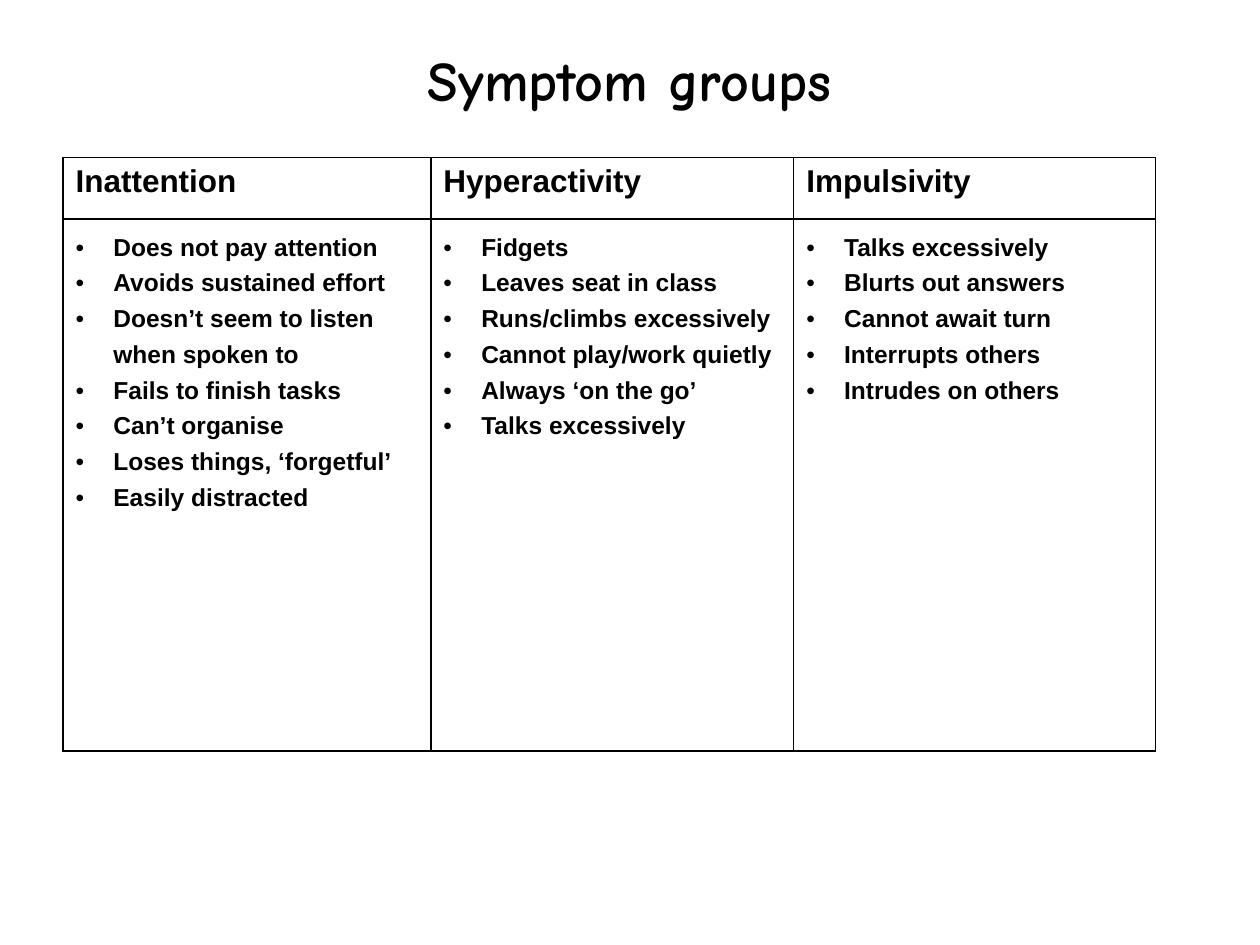
import pptx
import pptx.dml.color
import pptx.enum.text
import pptx.oxml
import pptx.oxml.ns
import pptx.util
from pptx.util import Inches

BLACK = pptx.dml.color.RGBColor(0, 0, 0)
WHITE = pptx.dml.color.RGBColor(255, 255, 255)

TITLE_FONT = {"name": "Comic Neue", "size": pptx.util.Pt(32), "bold": True}
HEADING_FONT = {"name": "Arial", "size": pptx.util.Pt(18), "bold": True}
SYMPTOM_FONT = {"name": "Arial", "size": pptx.util.Pt(14), "bold": True}

COLUMN_WIDTHS = [2.92, 2.88, 2.87]
ROW_HEIGHTS = [0.49, 4.22]

SYMPTOM_GROUPS = {
    "Inattention": [
        "Does not pay attention",
        "Avoids sustained effort",
        "Doesn’t seem to listen when spoken to",
        "Fails to finish tasks",
        "Can’t organise",
        "Loses things, ‘forgetful’",
        "Easily distracted",
    ],
    "Hyperactivity": [
        "Fidgets",
        "Leaves seat in class",
        "Runs/climbs excessively",
        "Cannot play/work quietly",
        "Always ‘on the go’",
        "Talks excessively",
    ],
    "Impulsivity": [
        "Talks excessively",
        "Blurts out answers",
        "Cannot await turn",
        "Interrupts others",
        "Intrudes on others",
    ],
}


def write_paragraph(paragraph, text, font_format):
    run = paragraph.add_run()
    run.text = text
    for attribute, value in font_format.items():
        setattr(run.font, attribute, value)
    run.font.color.rgb = BLACK


def add_bullet(paragraph):
    properties = paragraph._p.get_or_add_pPr()
    properties.set("marL", str(Inches(0.3)))
    properties.set("indent", str(Inches(-0.3)))
    namespace = pptx.oxml.ns.nsdecls("a")
    for xml in (
        f'<a:buFont {namespace} typeface="Arial"/>',
        f'<a:buChar {namespace} char="•"/>',
    ):
        properties.append(pptx.oxml.parse_xml(xml))
    paragraph.line_spacing = 1.3


def format_cell(cell):
    cell.fill.solid()
    cell.fill.fore_color.rgb = WHITE
    properties = cell._tc.get_or_add_tcPr()
    for position, side in enumerate("LRTB"):
        border = pptx.oxml.parse_xml(
            f'<a:ln{side} {pptx.oxml.ns.nsdecls("a")} w="{pptx.util.Pt(1)}">'
            f'<a:solidFill><a:srgbClr val="{BLACK}"/></a:solidFill></a:ln{side}>'
        )
        properties.insert(position, border)


def add_title(slide, left, top, width, height):
    shape = slide.shapes.add_textbox(left, top, width, height)
    frame = shape.text_frame
    frame.word_wrap = True
    frame.vertical_anchor = pptx.enum.text.MSO_ANCHOR.MIDDLE
    paragraph = frame.paragraphs[0]
    paragraph.alignment = pptx.enum.text.PP_ALIGN.CENTER
    write_paragraph(paragraph, "Symptom groups", TITLE_FONT)


def add_symptom_table(slide, left, top, width, height):
    table = slide.shapes.add_table(
        len(ROW_HEIGHTS), len(COLUMN_WIDTHS), left, top, width, height
    ).table
    for column, share in zip(table.columns, COLUMN_WIDTHS):
        column.width = int(width * share / sum(COLUMN_WIDTHS))
    for row, share in zip(table.rows, ROW_HEIGHTS):
        row.height = int(height * share / sum(ROW_HEIGHTS))
    for index, (heading, symptoms) in enumerate(SYMPTOM_GROUPS.items()):
        heading_cell, symptom_cell = table.cell(0, index), table.cell(1, index)
        format_cell(heading_cell)
        format_cell(symptom_cell)
        write_paragraph(heading_cell.text_frame.paragraphs[0], heading, HEADING_FONT)
        frame = symptom_cell.text_frame
        for number, symptom in enumerate(symptoms):
            paragraph = frame.add_paragraph() if number else frame.paragraphs[0]
            add_bullet(paragraph)
            write_paragraph(paragraph, symptom, SYMPTOM_FONT)


def main():
    presentation = pptx.Presentation()
    presentation.slide_width = Inches(10)
    presentation.slide_height = Inches(7.5)
    slide = presentation.slides.add_slide(presentation.slide_layouts[6])
    add_title(slide, Inches(1.22), Inches(0), Inches(7.56), Inches(1.25))
    add_symptom_table(slide, Inches(0.5), Inches(1.25), Inches(8.67), Inches(4.71))
    presentation.save("out.pptx")


if __name__ == "__main__":
    main()
